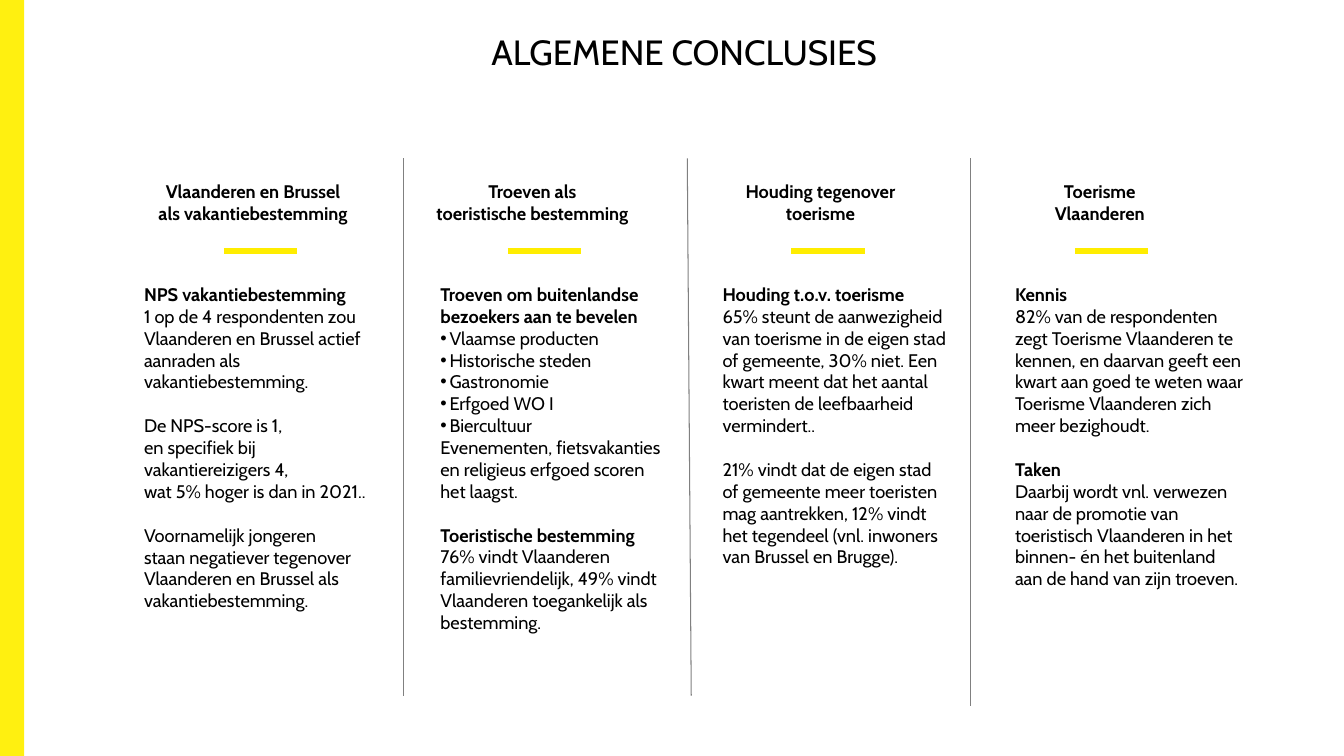
"""Build the slide with general conclusions in four columns."""
from dataclasses import dataclass

from lxml import etree
from pptx import Presentation
from pptx import util as u
from pptx.dml.color import RGBColor
from pptx.enum import shapes, text
from pptx.oxml import ns

COLORS = {"band": "FFF010", "bar": "FFED00", "divider": "808080", "text": "000000"}
FONT = "Cabin"
TEXT_SIZE = 13
LINE_PITCH = 15.65
BAR_LEFT, BAR_STEP, BAR_WIDTH, BAR_TOP = 5.64, 7.15, 1.85, 6.32


@dataclass
class Para:
    text: str
    bold: bool = False
    bullet: bool = False
    gap: bool = False
    size: float = TEXT_SIZE
    centered: bool = False


@dataclass
class Column:
    heading_left: float
    heading: list[str]
    body_left: float
    body: list[Para]
    body_width: float = 6.88


@dataclass
class Rule:
    x1: float
    y1: float
    x2: float
    y2: float
    color: str
    width: float


COLUMNS = [
    Column(3.25, ["Vlaanderen en Brussel", "als vakantiebestemming"], 3.02, [
        Para("NPS vakantiebestemming", bold=True),
        Para("1 op de 4 respondenten zou Vlaanderen en Brussel actief aanraden als "
             "vakantiebestemming."),
        Para("De NPS-score is 1,", gap=True),
        Para("en specifiek bij vakantiereizigers 4,"),
        Para("wat 5% hoger is dan in 2021.."),
        Para("Voornamelijk jongeren", gap=True),
        Para("staan negatiever tegenover Vlaanderen en Brussel als vakantiebestemming."),
    ]),
    Column(10.29, ["Troeven als", "toeristische bestemming"], 10.49, [
        Para("Troeven om buitenlandse bezoekers aan te bevelen", bold=True),
        *(Para(asset, bullet=True) for asset in (
            "Vlaamse producten", "Historische steden", "Gastronomie",
            "Erfgoed WO I", "Biercultuur")),
        Para("Evenementen, fietsvakanties en religieus erfgoed scoren het laagst."),
        Para("Toeristische bestemming", bold=True, gap=True),
        Para("76% vindt Vlaanderen familievriendelijk, 49% vindt Vlaanderen "
             "toegankelijk als bestemming."),
    ]),
    Column(17.55, ["Houding tegenover toerisme"], 17.6, [
        Para("Houding t.o.v. toerisme", bold=True),
        Para("65% steunt de aanwezigheid van toerisme in de eigen stad of gemeente, "
             "30% niet. Een kwart meent dat het aantal toeristen de leefbaarheid "
             "vermindert.."),
        Para("21% vindt dat de eigen stad of gemeente meer toeristen mag aantrekken, "
             "12% vindt het tegendeel (vnl. inwoners van Brussel en Brugge).", gap=True),
    ]),
    Column(24.59, ["Toerisme", "Vlaanderen"], 24.97, [
        Para("Kennis", bold=True),
        Para("82% van de respondenten zegt Toerisme Vlaanderen te kennen, en daarvan "
             "geeft een kwart aan goed te weten waar Toerisme Vlaanderen zich meer "
             "bezighoudt."),
        Para("Taken", bold=True, gap=True),
        Para("Daarbij wordt vnl. verwezen naar de promotie van toeristisch Vlaanderen "
             "in het binnen- én het buitenland aan de hand van zijn troeven."),
    ], body_width=7.06),
]

DIVIDERS = [
    Rule(10.16, 3.99, 10.16, 17.53, "divider", 0.75),
    Rule(17.32, 3.99, 17.42, 17.53, "divider", 0.75),
    Rule(24.46, 3.99, 24.46, 17.78, "divider", 0.75),
]


def rgb(name: str) -> RGBColor:
    return RGBColor.from_string(COLORS[name])


def add_bullet(p) -> None:
    pPr = p._p.get_or_add_pPr()
    pPr.set("marL", str(u.Cm(0.23)))
    pPr.set("indent", str(-u.Cm(0.23)))
    color = etree.SubElement(pPr, ns.qn("a:buClr"))
    etree.SubElement(color, ns.qn("a:srgbClr"), val=COLORS["text"])
    etree.SubElement(pPr, ns.qn("a:buFont"), typeface="Arial")
    etree.SubElement(pPr, ns.qn("a:buChar"), char="•")


def add_text(s, left: float, top: float, width: float, height: float,
             paras: list[Para], inset_x: float = 0.61, inset_y: float = 0.13) -> None:
    sp = s.shapes.add_textbox(u.Cm(left), u.Cm(top), u.Cm(width), u.Cm(height))
    tf = sp.text_frame
    tf.word_wrap = True
    tf.vertical_anchor = text.MSO_ANCHOR.TOP
    tf.margin_left = tf.margin_right = u.Cm(inset_x)
    tf.margin_top = tf.margin_bottom = u.Cm(inset_y)
    for i, para in enumerate(paras):
        p = tf.add_paragraph() if i else tf.paragraphs[0]
        p.alignment = text.PP_ALIGN.CENTER if para.centered else text.PP_ALIGN.LEFT
        if para.gap:
            p.space_before = u.Pt(LINE_PITCH)
        if para.bullet:
            add_bullet(p)
        r = p.add_run()
        r.text = para.text
        r.font.name = FONT
        r.font.size = u.Pt(para.size)
        r.font.bold = para.bold
        r.font.color.rgb = rgb("text")


def add_rule(s, rule: Rule) -> None:
    cx = s.shapes.add_connector(shapes.MSO_CONNECTOR.STRAIGHT, u.Cm(rule.x1),
                                u.Cm(rule.y1), u.Cm(rule.x2), u.Cm(rule.y2))
    cx.line.color.rgb = rgb(rule.color)
    cx.line.width = u.Pt(rule.width)
    etree.SubElement(cx._element.spPr, ns.qn("a:effectLst"))


def add_band(s, height: int) -> None:
    sp = s.shapes.add_shape(shapes.MSO_SHAPE.RECTANGLE, 0, 0, u.Cm(0.61), height)
    sp.shadow.inherit = False
    sp.fill.solid()
    sp.fill.fore_color.rgb = rgb("band")
    sp.line.fill.background()


def main() -> None:
    prs = Presentation()
    prs.slide_width, prs.slide_height = u.Cm(33.87), u.Cm(19.05)
    s = prs.slides.add_slide(prs.slide_layouts[6])
    add_band(s, prs.slide_height)
    add_text(s, 0.61, 0.76, 33.26, 3.18,
             [Para("ALGEMENE CONCLUSIES", size=25, centered=True)], 0, 0)
    for divider in DIVIDERS:
        add_rule(s, divider)
    for i, column in enumerate(COLUMNS):
        x = BAR_LEFT + i * BAR_STEP
        add_rule(s, Rule(x, BAR_TOP, x + BAR_WIDTH, BAR_TOP, "bar", 4.5))
        heading = [Para(line, bold=True, centered=True) for line in column.heading]
        add_text(s, column.heading_left, 4.42, 6.25, 2.01, heading)
        add_text(s, column.body_left, 7.01, column.body_width, 9.12, column.body)
    prs.save("out.pptx")


if __name__ == "__main__":
    main()
